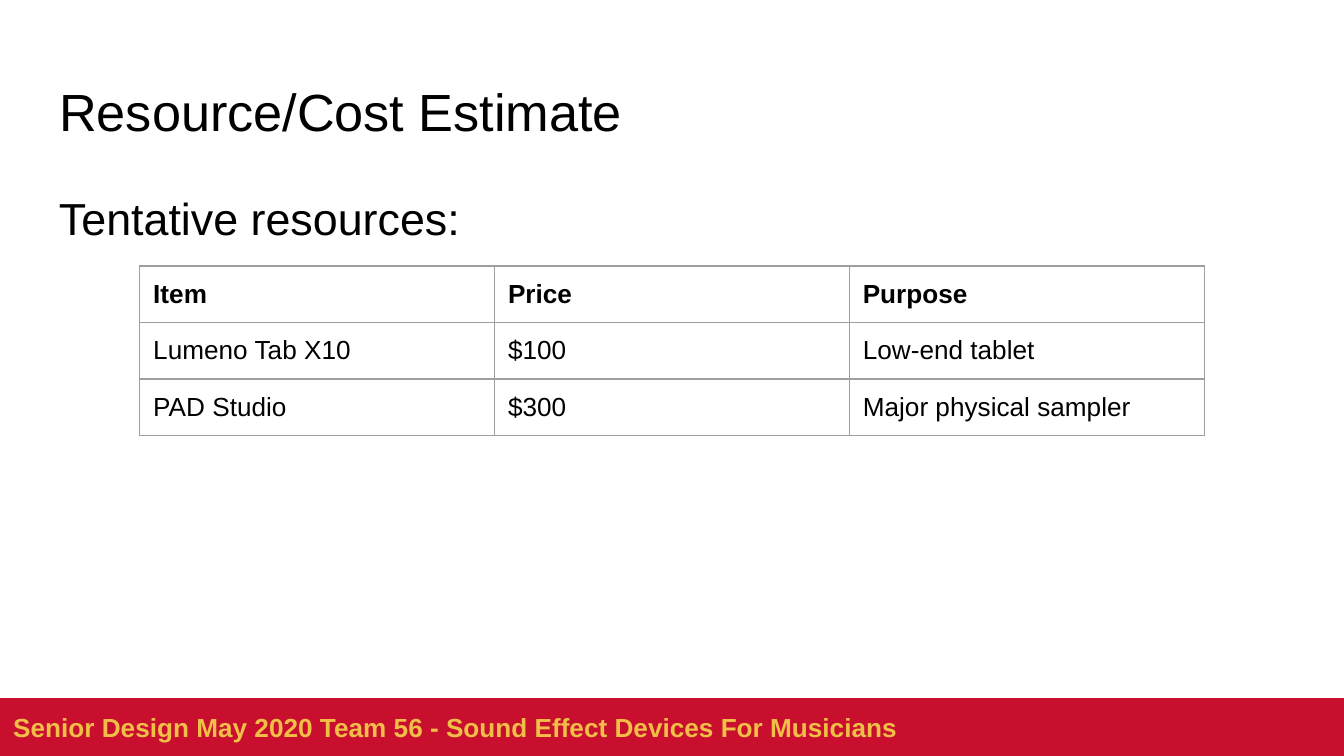
"""Build the resource and cost estimate slide."""
from dataclasses import dataclass

from lxml import etree
from pptx import Presentation
from pptx import util as u
from pptx.dml.color import RGBColor
from pptx.enum import shapes, text
from pptx.oxml import ns


@dataclass(frozen=True)
class Theme:
    font: str = "Arial"
    ink: str = "000000"
    banner: str = "C8102E"
    gold: str = "F1BE48"
    grid: str = "9E9E9E"
    title: int = 28
    lead: int = 24
    small: int = 14
    inset: float = 0.1
    grid_width: float = 0.75


THEME = Theme()
SLIDE_WIDTH = u.Inches(10)
SLIDE_HEIGHT = SLIDE_WIDTH * 9 // 16
RESOURCES = [
    ("Item", "Price", "Purpose"),
    ("Lumeno Tab X10", "$100", "Low-end tablet"),
    ("PAD Studio", "$300", "Major physical sampler"),
]


def write(frame, wording, size, color=THEME.ink, bold=False, spacing=1.0):
    paragraph = frame.paragraphs[0]
    paragraph.alignment = text.PP_ALIGN.LEFT
    paragraph.line_spacing = spacing
    run = paragraph.add_run()
    run.text = wording
    run.font.name = THEME.font
    run.font.size = u.Pt(size)
    run.font.bold = bold
    run.font.color.rgb = RGBColor.from_string(color)


def set_margins(holder):
    holder.margin_left = holder.margin_right = u.Inches(THEME.inset)
    holder.margin_top = holder.margin_bottom = u.Inches(THEME.inset)


def set_frame(frame, anchor):
    frame.word_wrap = True
    frame.auto_size = text.MSO_AUTO_SIZE.NONE
    frame.vertical_anchor = anchor
    set_margins(frame)


def add_banner(slide, wording):
    height = u.Inches(0.43)
    banner = slide.shapes.add_shape(
        shapes.MSO_SHAPE.RECTANGLE, 0, SLIDE_HEIGHT - height, SLIDE_WIDTH, height)
    banner.shadow.inherit = False
    banner.fill.solid()
    banner.fill.fore_color.rgb = RGBColor.from_string(THEME.banner)
    banner.line.fill.background()
    set_frame(banner.text_frame, text.MSO_ANCHOR.MIDDLE)
    write(banner.text_frame, wording, THEME.small, THEME.gold, bold=True)


def set_title(slide, wording):
    title = slide.shapes.title
    title.left, title.top = u.Inches(0.34), u.Inches(0.49)
    title.width, title.height = u.Inches(9.32), u.Inches(0.63)
    set_frame(title.text_frame, text.MSO_ANCHOR.TOP)
    write(title.text_frame, wording, THEME.title)


def add_lead(slide, wording):
    lead = slide.shapes.add_textbox(
        u.Inches(0.34), u.Inches(1.26), u.Inches(9.32), u.Inches(3.74))
    set_frame(lead.text_frame, text.MSO_ANCHOR.TOP)
    write(lead.text_frame, wording, THEME.lead, spacing=1.15)


def set_borders(cell):
    properties = cell._tc.get_or_add_tcPr()
    for index, side in enumerate(("lnL", "lnR", "lnT", "lnB")):
        border = etree.Element(ns.qn(f"a:{side}"), w=str(u.Pt(THEME.grid_width)))
        fill = etree.SubElement(border, ns.qn("a:solidFill"))
        etree.SubElement(fill, ns.qn("a:srgbClr"), val=THEME.grid)
        properties.insert(index, border)


def add_resources(slide, rows):
    column_width, row_height = u.Inches(2.64), u.Inches(0.42)
    table = slide.shapes.add_table(
        len(rows), len(rows[0]), u.Inches(1.04), u.Inches(1.98),
        column_width * len(rows[0]), row_height * len(rows)).table
    table.first_row = table.horz_banding = False
    for row_index, row in enumerate(rows):
        for column_index, wording in enumerate(row):
            cell = table.cell(row_index, column_index)
            set_margins(cell)
            cell.fill.background()
            set_borders(cell)
            write(cell.text_frame, wording, THEME.small, bold=row_index == 0)


def main():
    deck = Presentation()
    deck.slide_width, deck.slide_height = SLIDE_WIDTH, SLIDE_HEIGHT
    slide = deck.slides.add_slide(deck.slide_layouts.get_by_name("Title Only"))
    add_banner(slide, "Senior Design May 2020 Team 56 - Sound Effect Devices For Musicians")
    set_title(slide, "Resource/Cost Estimate")
    add_lead(slide, "Tentative resources:")
    add_resources(slide, RESOURCES)
    deck.save("out.pptx")


if __name__ == "__main__":
    main()
